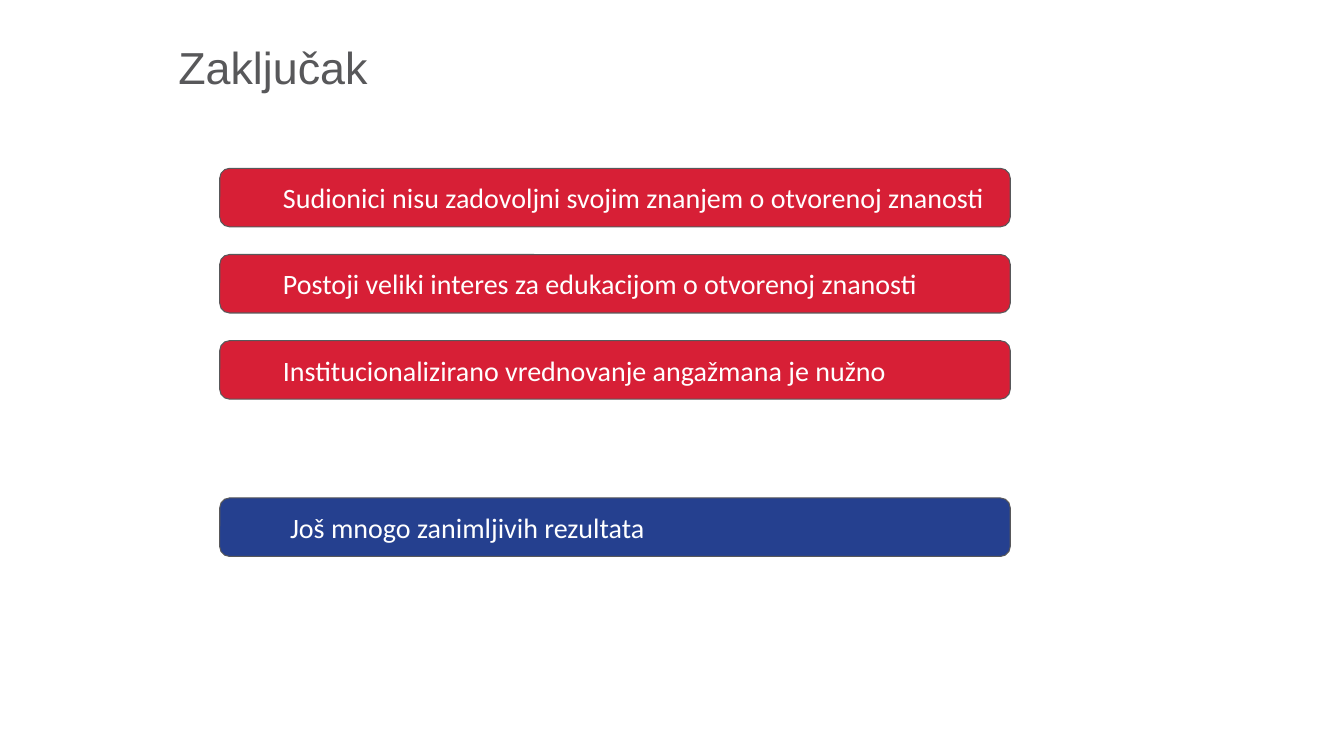
from dataclasses import dataclass

import pptx
import pptx.dml.color
import pptx.enum.shapes
import pptx.enum.text
import pptx.presentation
import pptx.slide
import pptx.text.text
import pptx.util

Inches = pptx.util.Inches
Pt = pptx.util.Pt
RGB = pptx.dml.color.RGBColor


@dataclass(frozen=True)
class Theme:
    grey: RGB = RGB(0x58, 0x58, 0x5A)
    red: RGB = RGB(0xD7, 0x1F, 0x36)
    blue: RGB = RGB(0x25, 0x40, 0x8F)
    white: RGB = RGB(0xFF, 0xFF, 0xFF)
    title_font: str = "Arial"
    bar_font: str = "Calibri"
    title_size: int = 32
    bar_size: int = 20
    line_width: float = 0.75


@dataclass(frozen=True)
class Bar:
    text: str
    top: float
    fill: RGB
    indent: float


THEME = Theme()
BAR_LEFT, BAR_WIDTH, BAR_HEIGHT = 2.18, 7.84, 0.58
FIRST_TOP, BAR_STEP = 1.67, 0.855

CONCLUSIONS = (
    "Sudionici nisu zadovoljni svojim znanjem o otvorenoj znanosti",
    "Postoji veliki interes za edukacijom o otvorenoj znanosti",
    "Institucionalizirano vrednovanje angažmana je nužno",
)
BARS = [
    Bar(text, FIRST_TOP + i * BAR_STEP, THEME.red, 0.5)
    for i, text in enumerate(CONCLUSIONS)
] + [Bar("Još mnogo zanimljivih rezultata", 4.94, THEME.blue, 0.57)]


def set_text(tf: pptx.text.text.TextFrame, text: str, font: str, size: int,
             color: RGB, frame_format: dict) -> pptx.text.text._Paragraph:
    """Fill a text frame with one left-aligned, formatted paragraph."""
    for name, value in frame_format.items():
        setattr(tf, name, value)
    p = tf.paragraphs[0]
    p.alignment = pptx.enum.text.PP_ALIGN.LEFT
    r = p.add_run()
    r.text = text
    for name, value in {"name": font, "size": Pt(size)}.items():
        setattr(r.font, name, value)
    r.font.color.rgb = color
    return p


def add_title(s: pptx.slide.Slide, text: str) -> None:
    sp = s.shapes.add_textbox(Inches(1.67), Inches(0.4), Inches(10.75), Inches(1.45))
    p = set_text(sp.text_frame, text, THEME.title_font, THEME.title_size,
                 THEME.grey, {"word_wrap": True})
    p.line_spacing = 0.9


def add_bar(s: pptx.slide.Slide, bar: Bar) -> None:
    sp = s.shapes.add_shape(
        pptx.enum.shapes.MSO_SHAPE.ROUNDED_RECTANGLE,
        Inches(BAR_LEFT), Inches(bar.top), Inches(BAR_WIDTH), Inches(BAR_HEIGHT))
    sp.shadow.inherit = False
    sp.adjustments[0] = 0.167
    sp.fill.solid()
    sp.fill.fore_color.rgb = bar.fill
    sp.line.color.rgb = THEME.grey
    sp.line.width = Pt(THEME.line_width)
    margins = {f"margin_{side}": Inches(0.1)
               for side in ("left", "top", "right", "bottom")}
    p = set_text(sp.text_frame, bar.text, THEME.bar_font, THEME.bar_size, THEME.white,
                 {"word_wrap": True, **margins,
                  "vertical_anchor": pptx.enum.text.MSO_ANCHOR.MIDDLE})
    # Paragraph indent
    pPr = p._p.get_or_add_pPr()
    pPr.set("marL", str(Inches(bar.indent)))
    pPr.set("indent", "0")


def main() -> None:
    prs = pptx.Presentation()
    prs.slide_width, prs.slide_height = Inches(13.33), Inches(7.5)
    s = prs.slides.add_slide(prs.slide_layouts[6])

    # Heading
    add_title(s, "Zaključak")

    # Conclusions and closing bar
    for bar in BARS:
        add_bar(s, bar)

    prs.save("out.pptx")


if __name__ == "__main__":
    main()
